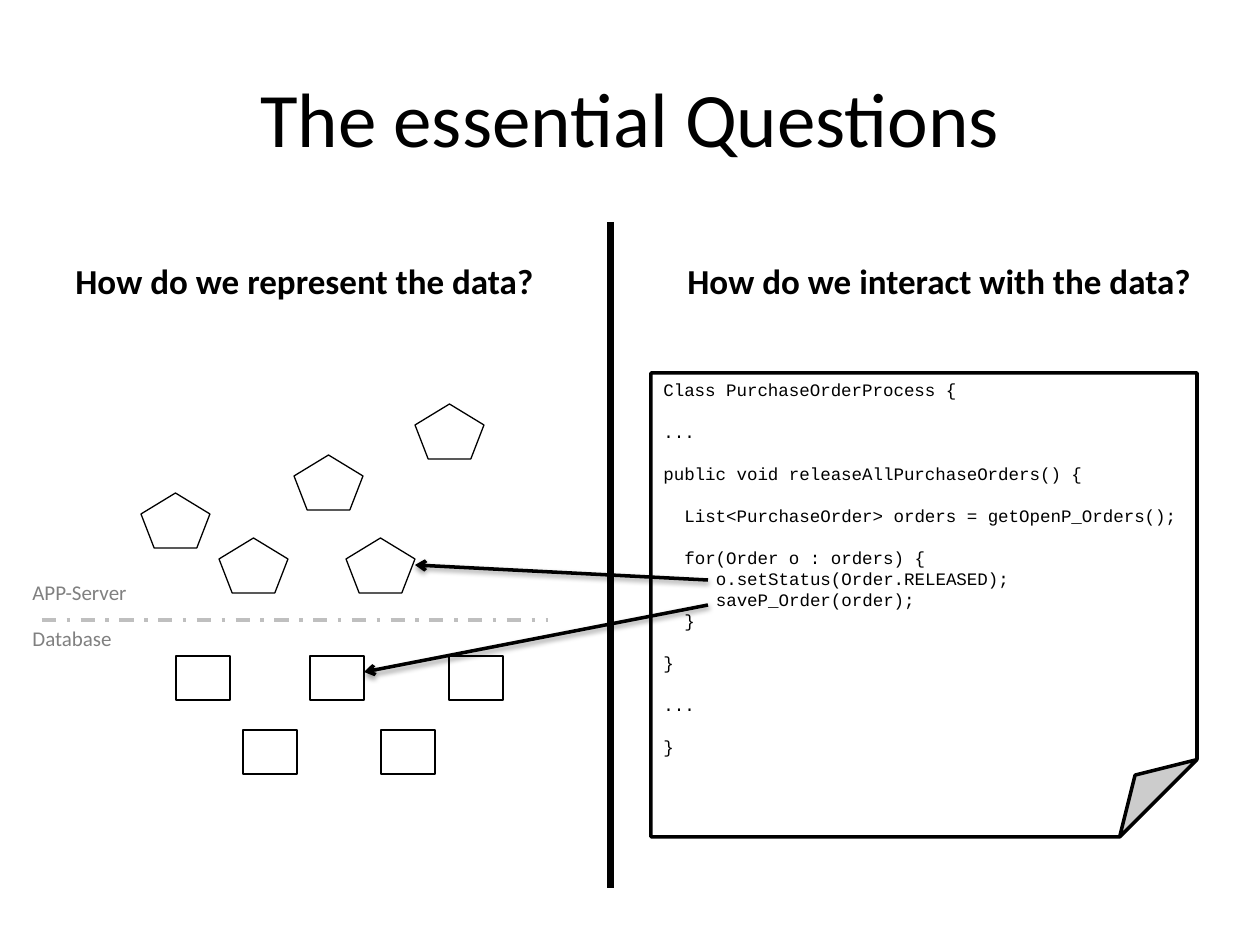
import pptx
import pptx.util
import pptx.dml.color
import pptx.enum.dml
import pptx.enum.shapes
import pptx.enum.text
import pptx.oxml
import pptx.oxml.ns

RGB = pptx.dml.color.RGBColor
BLACK = RGB(0, 0, 0)
WHITE = RGB(255, 255, 255)
GRAY = RGB(128, 128, 128)
PALE = RGB(191, 191, 191)
PX = 914400 / 126
Pt = pptx.util.Pt
KIND = pptx.enum.shapes.MSO_SHAPE
NS = pptx.oxml.ns.nsdecls("a")
SHADE = (f'<a:effectLst {NS}><a:outerShdw blurRad="39370" dist="20320" dir="5400000" rotWithShape="0">'
         '<a:srgbClr val="000000"><a:alpha val="38000"/></a:srgbClr></a:outerShdw></a:effectLst>')
PLAIN = f'<a:effectLst {NS}/>'


def emu(*nums):
    return [round(n * PX) for n in nums]


def style(run, font, size, color, bold=False):
    run.font.name = font
    run.font.size = Pt(size)
    run.font.color.rgb = color
    run.font.bold = bold


deck = pptx.Presentation()
deck.slide_width, deck.slide_height = emu(1260, 945)
slide = deck.slides.add_slide(deck.slide_layouts[5])
shapes = slide.shapes

title = shapes.title
title.left, title.top, title.width, title.height = emu(63, 38, 1134, 158)
frame = title.text_frame
frame.vertical_anchor = pptx.enum.text.MSO_ANCHOR.MIDDLE
para = frame.paragraphs[0]
para.alignment = pptx.enum.text.PP_ALIGN.CENTER
run = para.add_run()
run.text = "The essential Questions"
style(run, "Calibri", 44, BLACK)

for text, x, y, w, h, size, color, bold in [
    ("How do we represent the data?", 63, 253, 488, 55, 20, BLACK, True),
    ("How do we interact with the data?", 675, 253, 533, 55, 20, BLACK, True),
    ("APP-Server", 20, 573, 121, 38, 12, GRAY, False),
    ("Database", 20, 619, 106, 38, 12, GRAY, False),
]:
    frame = shapes.add_textbox(*emu(x, y, w, h)).text_frame
    frame.word_wrap = False
    frame.auto_size = pptx.enum.text.MSO_AUTO_SIZE.SHAPE_TO_FIT_TEXT
    run = frame.paragraphs[0].add_run()
    run.text = text
    style(run, "Calibri", size, color, bold)

pents = [(141, 493), (219, 538), (294, 455), (346, 538), (415, 404)]
rects = [(176, 656), (243, 730), (310, 656), (381, 730), (449, 656)]
nodes = [(shapes, KIND.REGULAR_PENTAGON, x, y, 69, 55, 0.75) for x, y in pents]
nodes += [(shapes, KIND.RECTANGLE, x, y, 54, 44, 0.75) for x, y in rects]
group = shapes.add_group_shape()
nodes.append((group.shapes, KIND.FOLDED_CORNER, 651, 373, 546, 464, 2))
for home, kind, x, y, w, h, width in nodes:
    node = home.add_shape(kind, *emu(x, y, w, h))
    node.shadow.inherit = False
    node.fill.solid()
    node.fill.fore_color.rgb = WHITE
    node.line.color.rgb = BLACK
    node.line.width = Pt(width)

code = [
    ("Class PurchaseOrderProcess {", 0, 0),
    ("...", 0, 1),
    ("public void releaseAllPurchaseOrders() {", 0, 1),
    ("List<PurchaseOrder> orders = getOpenP_Orders();", 2, 1),
    ("for(Order o : orders) {", 2, 1),
    ("o.setStatus(Order.RELEASED);", 5, 0),
    ("saveP_Order(order);", 5, 0),
    ("}", 2, 0),
    ("}", 0, 1),
    ("...", 0, 1),
    ("}", 0, 1),
]
frame = group.shapes.add_textbox(*emu(651, 373, 546, 394)).text_frame
frame.word_wrap = True
for i, (text, indent, gap) in enumerate(code):
    para = frame.add_paragraph() if i else frame.paragraphs[0]
    para.line_spacing = Pt(12)
    para.space_before = Pt(12 * gap)
    para._p.get_or_add_pPr().set("marL", str(Pt(6 * indent)))
    run = para.add_run()
    run.text = text
    style(run, "Courier New", 10, BLACK)

for ends, color, width, dash, arrow in [
    ((611, 222, 611, 888), BLACK, 4, None, False),
    ((42, 620, 548, 620), PALE, 2, pptx.enum.dml.MSO_LINE.DASH_DOT, False),
    ((708, 605, 364, 672), BLACK, 2, None, True),
    ((708, 580, 415, 565), BLACK, 2, None, True),
]:
    link = shapes.add_connector(pptx.enum.shapes.MSO_CONNECTOR.STRAIGHT, *emu(*ends))
    link.line.color.rgb = color
    link.line.width = Pt(width)
    if dash:
        link.line.dash_style = dash
    if arrow:
        link.line._get_or_add_ln().append(pptx.oxml.parse_xml(f'<a:tailEnd {NS} type="arrow"/>'))
    link._element.spPr.append(pptx.oxml.parse_xml(SHADE if arrow else PLAIN))

deck.save("out.pptx")
